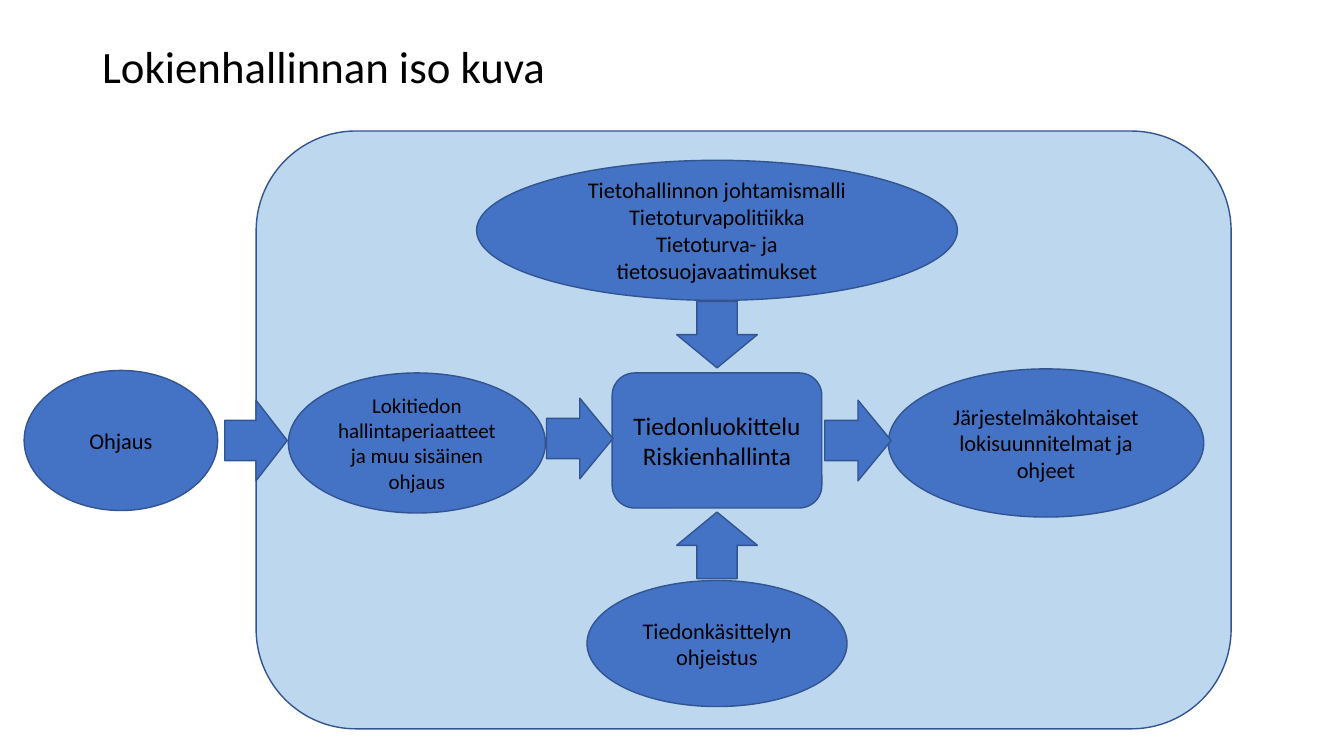
import pptx
import pptx.util
import pptx.dml.color
import pptx.enum.shapes
import pptx.enum.text

SHAPES = pptx.enum.shapes.MSO_SHAPE
ALIGN = pptx.enum.text.PP_ALIGN
ANCHOR = pptx.enum.text.MSO_ANCHOR

WIDTH, HEIGHT = 13.33, 7.5
FONT = "Calibri"
BLACK, BLUE, PALE_BLUE, OUTLINE = "000000", "4472C4", "BDD7EE", "325491"
MIDDLE_COLUMN, MIDDLE_ROW = 53.35, 58.27

TITLE = "Lokienhallinnan iso kuva"
TITLE_AREA = (50, 15, 86.27, 19.33)
PANEL_AREA = (55.33, 56.87, 72.54, 79.07)

NODES = [
    (SHAPES.OVAL, (31.02, 58.6, 19.13, 18.53), 15,
     ["Lokitiedon hallintaperiaatteet ja muu sisäinen ohjaus"]),
    (SHAPES.ROUNDED_RECTANGLE, (MIDDLE_COLUMN, MIDDLE_ROW, 15.6, 17.87), 18,
     ["Tiedonluokittelu", "Riskienhallinta"]),
    (SHAPES.OVAL, (MIDDLE_COLUMN, 85.13, 19.35, 16.67), 16,
     ["Tiedonkäsittelyn ohjeistus"]),
    (SHAPES.OVAL, (77.83, 58.6, 23.48, 19.6), 16,
     ["Järjestelmäkohtaiset lokisuunnitelmat ja ohjeet"]),
    (SHAPES.OVAL, (MIDDLE_COLUMN, 30.47, 35.78, 18.53), 16,
     ["Tietohallinnon johtamismalli", "Tietoturvapolitiikka",
      "Tietoturva- ja tietosuojavaatimukset"]),
    (SHAPES.OVAL, (9, MIDDLE_ROW, 14.4, 18.53), 16, ["Ohjaus"]),
]

ARROW_HEIGHT = 10.67
ARROWS = [
    (43.14, 58, 4.95, 0),
    (MIDDLE_COLUMN, 72.13, 4.95, 270),
    (63.84, MIDDLE_ROW, 4.95, 0),
    (MIDDLE_COLUMN, 44.27, 4.95, 90),
    (19.05, MIDDLE_ROW, 4.65, 0),
]


def color(hex_string):
    return pptx.dml.color.RGBColor.from_string(hex_string)


def place(area):
    center_x, center_y, width, height = area
    shares = [
        ((center_x - width / 2), WIDTH),
        ((center_y - height / 2), HEIGHT),
        (width, WIDTH),
        (height, HEIGHT),
    ]
    return [pptx.util.Inches(share * full / 100) for share, full in shares]


def add_paragraphs(frame, lines, size, alignment):
    frame.word_wrap = True
    for index, line in enumerate(lines):
        paragraph = frame.add_paragraph() if index else frame.paragraphs[0]
        paragraph.alignment = alignment
        run = paragraph.add_run()
        run.text = line
        run.font.name = FONT
        run.font.size = pptx.util.Pt(size)
        run.font.color.rgb = color(BLACK)


def add_figure(slide, kind, area, fill):
    shape = slide.shapes.add_shape(kind, *place(area))
    shape.shadow.inherit = False
    shape.fill.solid()
    shape.fill.fore_color.rgb = color(fill)
    shape.line.color.rgb = color(OUTLINE)
    shape.line.width = pptx.util.Pt(1)
    return shape


def main():
    presentation = pptx.Presentation()
    presentation.slide_width = pptx.util.Inches(WIDTH)
    presentation.slide_height = pptx.util.Inches(HEIGHT)
    slide = presentation.slides.add_slide(presentation.slide_layouts[6])

    title = slide.shapes.add_textbox(*place(TITLE_AREA)).text_frame
    add_paragraphs(title, [TITLE], 32, ALIGN.LEFT)
    title.paragraphs[0].line_spacing = 0.9

    add_figure(slide, SHAPES.ROUNDED_RECTANGLE, PANEL_AREA, PALE_BLUE)

    for kind, area, size, lines in NODES:
        frame = add_figure(slide, kind, area, BLUE).text_frame
        frame.vertical_anchor = ANCHOR.MIDDLE
        add_paragraphs(frame, lines, size, ALIGN.CENTER)

    for center_x, center_y, length, rotation in ARROWS:
        area = (center_x, center_y, length, ARROW_HEIGHT)
        arrow = add_figure(slide, SHAPES.RIGHT_ARROW, area, BLUE)
        arrow.rotation = rotation

    presentation.save("out.pptx")


if __name__ == "__main__":
    main()
